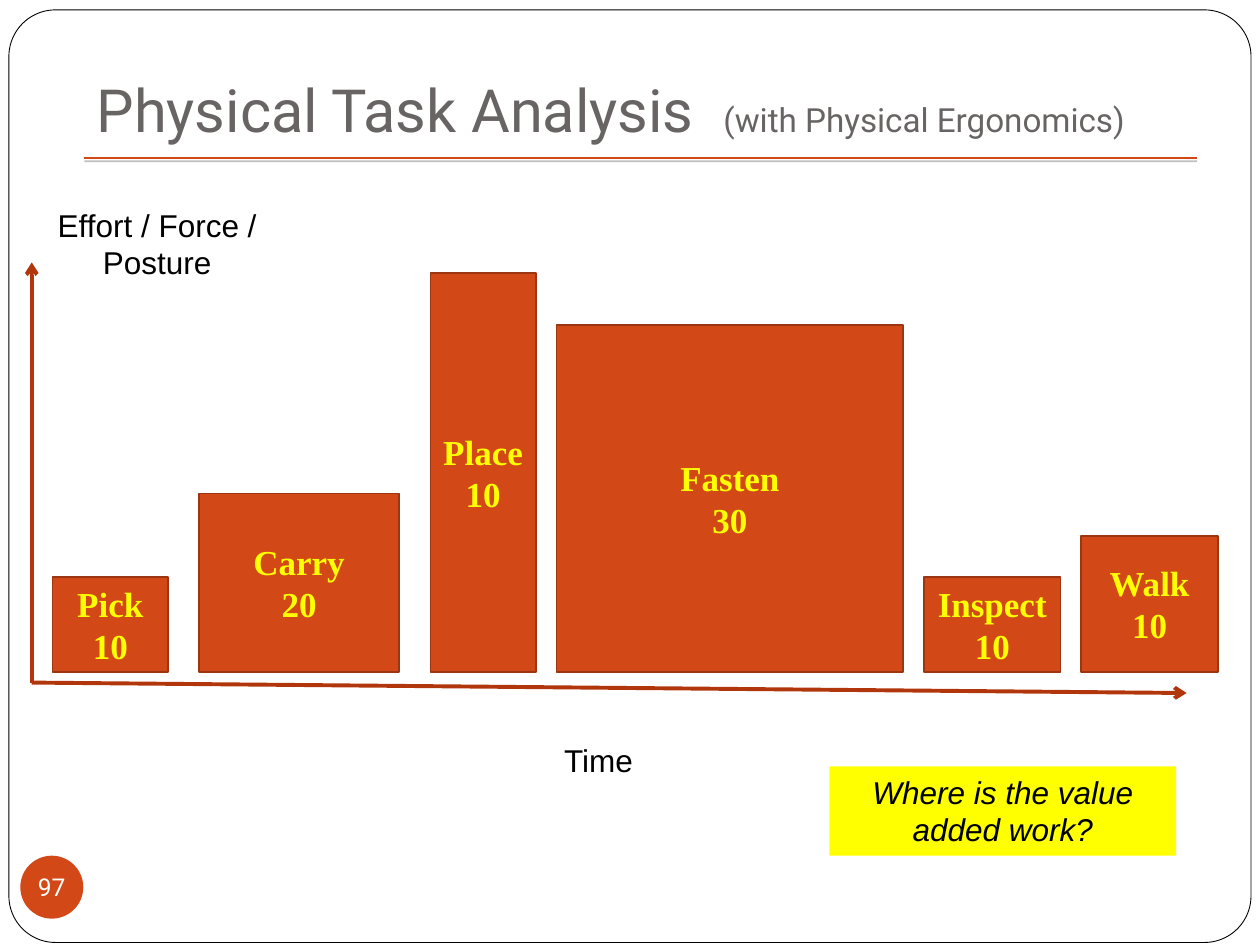
from dataclasses import dataclass

from lxml import etree
from pptx import Presentation
from pptx import util as u
from pptx.dml.color import RGBColor
from pptx.enum import shapes, text
from pptx.oxml import ns

ORANGE = RGBColor(0xD3, 0x48, 0x17)
BAR_EDGE = RGBColor(0x9C, 0x35, 0x11)
AXIS = RGBColor(0xB1, 0x36, 0x0B)
GREY = RGBColor(0x69, 0x64, 0x64)
YELLOW = RGBColor(0xFF, 0xFF, 0x00)
WHITE = RGBColor(0xFF, 0xFF, 0xFF)
BLACK = RGBColor(0, 0, 0)

BASELINE = 13.55  # bottom of every bar, cm
ORIGIN = (0.64, 13.76)


@dataclass
class Bar:
    task: str
    time: int
    left: float
    width: float
    height: float


@dataclass
class Label:
    words: str
    left: float
    top: float
    width: float
    height: float
    fill: RGBColor | None = None
    italic: bool = False


BARS = [
    Bar("Pick", 10, 1.06, 2.33, 1.91),
    Bar("Carry", 20, 4.02, 4.02, 3.6),
    Bar("Place", 10, 8.68, 2.12, 8.04),
    Bar("Fasten", 30, 11.22, 6.99, 6.99),
    Bar("Inspect", 10, 18.63, 2.75, 1.91),
    Bar("Walk", 10, 21.8, 2.75, 2.75),
]
LABELS = [
    Label("Effort / Force / Posture", 0.42, 4.02, 5.5, 1.8),
    Label("Time", 9.95, 14.82, 4.23, 1.03),
    Label("Where is the value added work?", 16.72, 15.45, 6.99, 1.8, YELLOW, True),
]


def add_run(p, words: str, *, size: float, font: str, color: RGBColor,
            bold: bool = False, italic: bool = False) -> None:
    r = p.add_run()
    r.text = words
    r.font.size, r.font.name = u.Pt(size), font
    r.font.bold, r.font.italic = bold, italic
    r.font.color.rgb = color


def write(sp, words: str, *, anchor=text.MSO_ANCHOR.MIDDLE, inset: float = 0.1,
          wrap: bool = True, **fmt) -> None:
    """Fill a shape with centred paragraphs, one for each line of words."""
    tf = sp.text_frame
    tf.word_wrap, tf.vertical_anchor = wrap, anchor
    tf.margin_left = tf.margin_right = u.Cm(inset)
    for i, line in enumerate(words.split("\n")):
        p = tf.add_paragraph() if i else tf.paragraphs[0]
        p.alignment = text.PP_ALIGN.CENTER
        add_run(p, line, **fmt)


def add_box(s, kind, left: float, top: float, width: float, height: float,
            fill: RGBColor | None, edge: RGBColor | None = None, weight: float = 1):
    sp = s.shapes.add_shape(kind, u.Cm(left), u.Cm(top), u.Cm(width), u.Cm(height))
    sp.shadow.inherit = False
    if fill is None:
        sp.fill.background()
    else:
        sp.fill.solid()
        sp.fill.fore_color.rgb = fill
    if edge is None:
        sp.line.fill.background()
    else:
        sp.line.color.rgb = edge
        sp.line.width = u.Pt(weight)
    return sp


def add_line(s, start: tuple[float, float], end: tuple[float, float],
             color: RGBColor, weight: float, arrow: bool = False):
    """Draw a line and return its effect list."""
    c = s.shapes.add_connector(shapes.MSO_CONNECTOR.STRAIGHT,
                               *(u.Cm(v) for v in (*start, *end)))
    c.line.color.rgb = color
    c.line.width = u.Pt(weight)
    if arrow:
        etree.SubElement(c.line._get_or_add_ln(), ns.qn("a:tailEnd"), type="arrow")
    return etree.SubElement(c.element.spPr, ns.qn("a:effectLst"))


def add_rule_shadow(effects) -> None:
    shadow = etree.SubElement(effects, ns.qn("a:outerShdw"), blurRad="0",
                              dist=str(u.Pt(2)), dir="5400000", rotWithShape="0")
    color = etree.SubElement(shadow, ns.qn("a:srgbClr"), val="808080")
    etree.SubElement(color, ns.qn("a:alpha"), val="50000")


def add_title(s) -> None:
    sp = s.shapes.title
    sp.left, sp.top, sp.width, sp.height = (u.Cm(v) for v in (1.7, 1.27, 22.43, 1.9))
    tf = sp.text_frame
    tf.auto_size, tf.word_wrap = text.MSO_AUTO_SIZE.NONE, True
    tf.vertical_anchor = text.MSO_ANCHOR.BOTTOM
    tf.margin_left = tf.margin_right = tf.margin_bottom = u.Cm(0.25)
    p = tf.paragraphs[0]
    p.alignment = text.PP_ALIGN.LEFT
    add_run(p, "Physical Task Analysis  ", size=34, font="Roboto", color=GREY)
    add_run(p, "(with Physical Ergonomics)", size=19, font="Roboto", color=GREY)


def add_bar(s, bar: Bar) -> None:
    sp = add_box(s, shapes.MSO_SHAPE.RECTANGLE, bar.left, BASELINE - bar.height,
                 bar.width, bar.height, ORANGE, BAR_EDGE)
    write(sp, f"{bar.task}\n{bar.time}", size=20, font="Times New Roman",
          color=YELLOW, bold=True)


def add_label(s, label: Label) -> None:
    sp = add_box(s, shapes.MSO_SHAPE.RECTANGLE, label.left, label.top,
                 label.width, label.height, label.fill)
    write(sp, label.words, anchor=text.MSO_ANCHOR.TOP, inset=0.25, size=18,
          font="Arial", color=BLACK, italic=label.italic)


def main() -> None:
    prs = Presentation()
    prs.slide_width, prs.slide_height = u.Cm(25.4), u.Cm(19.05)
    s = prs.slides.add_slide(prs.slide_layouts[5])

    # Frame behind the title, title and rule
    frame = add_box(s, shapes.MSO_SHAPE.ROUNDED_RECTANGLE, 0.18, 0.2, 25.04, 18.8,
                    WHITE, BLACK, 0.5)
    frame.adjustments[0] = 0.05
    s.shapes.title.element.addprevious(frame.element)
    add_title(s)
    add_rule_shadow(add_line(s, (1.7, 3.18), (24.13, 3.18), ORANGE, 1))

    # Slide number
    badge = add_box(s, shapes.MSO_SHAPE.OVAL, 0.41, 17.25, 1.27, 1.27, ORANGE)
    write(badge, "97", inset=0, wrap=False, size=14, font="Roboto", color=WHITE)

    # Bars, axes and labels
    for bar in BARS:
        add_bar(s, bar)
    for tip in ((0.64, 5.29), (23.92, 13.97)):
        add_line(s, ORIGIN, tip, AXIS, 2.25, arrow=True)
    for label in LABELS:
        add_label(s, label)

    prs.save("out.pptx")


if __name__ == "__main__":
    main()
